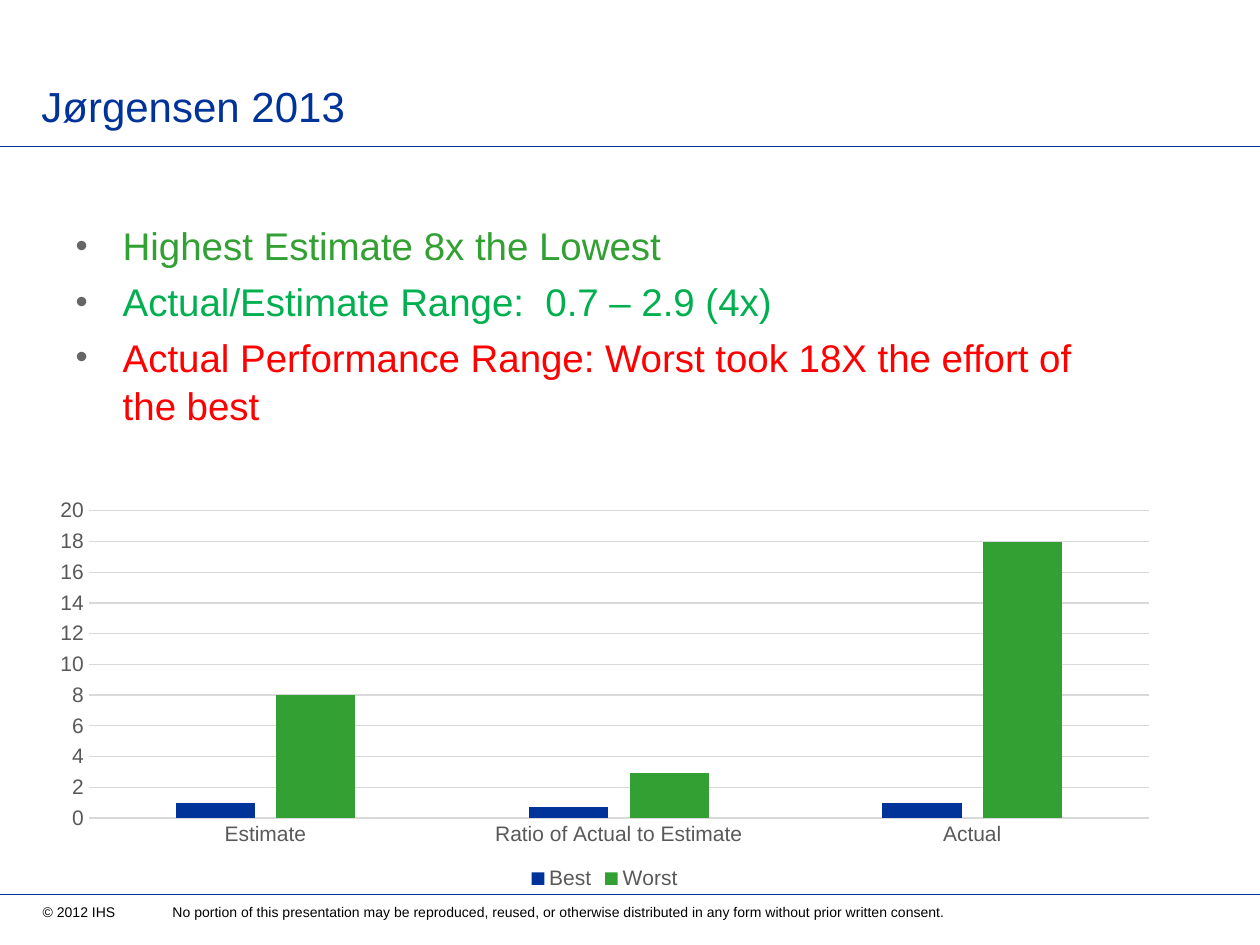
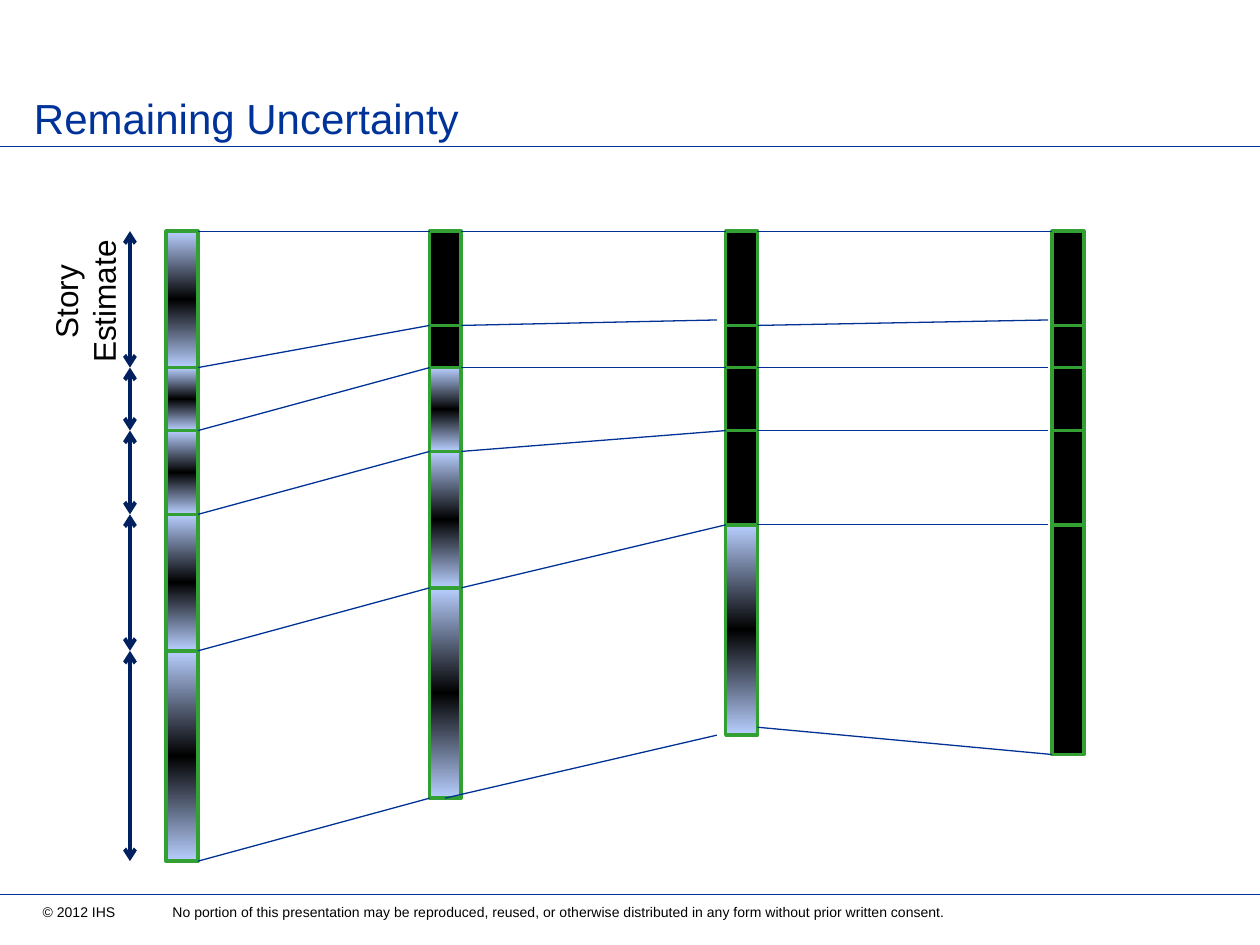
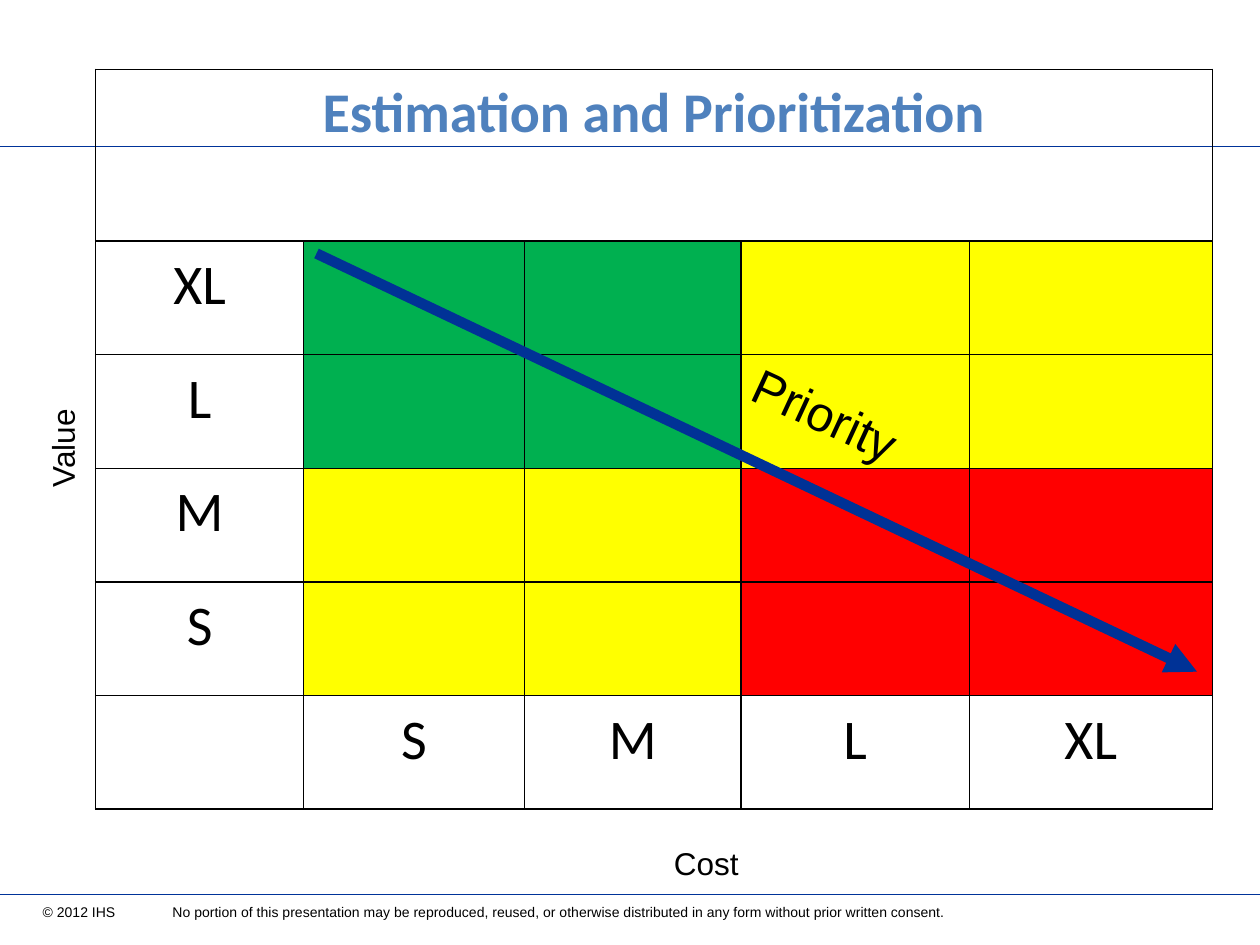
"""Build three slides about the uncertainty of software estimates."""
import copy
import itertools

import lxml.etree
import pptx
import pptx.chart.data
import pptx.dml.color
import pptx.enum.chart
import pptx.enum.shapes
import pptx.enum.text
import pptx.oxml.ns
import pptx.util

Cm = pptx.util.Cm
Pt = pptx.util.Pt
qn = pptx.oxml.ns.qn
SubElement = lxml.etree.SubElement
Align = pptx.enum.text.PP_ALIGN
AutoSize = pptx.enum.text.MSO_AUTO_SIZE

COLOURS = {
    name: pptx.dml.color.RGBColor.from_string(value)
    for name, value in {
        "blue": "003399", "link": "003296", "navy": "002060", "pale": "B8CFFF",
        "black": "000000", "green": "32A032", "emerald": "00B050",
        "yellow": "FFFF00", "red": "FF0000", "heading": "4F81BD",
        "bullet": "666666", "label": "595959", "grid": "D9D9D9",
    }.items()
}
FONT = "Arial"


def add_line(slide, start, end, colour, width, head=None, tail=None):
    points = [Cm(value) for value in (*start, *end)]
    line = slide.shapes.add_connector(pptx.enum.shapes.MSO_CONNECTOR.STRAIGHT, *points)
    line.line.color.rgb = COLOURS[colour]
    line.line.width = Pt(width)
    for tag, kind in (("a:headEnd", head), ("a:tailEnd", tail)):
        if kind:
            SubElement(line.line._get_or_add_ln(), qn(tag), type=kind)
    SubElement(line._element.spPr, qn("a:effectLst"))


def add_text(slide, text, box, size, rotation=0, align=Align.CENTER, wrap=True):
    shape = slide.shapes.add_textbox(*[Cm(value) for value in box])
    shape.rotation = rotation
    shape.text_frame.word_wrap = wrap
    shape.text_frame.auto_size = AutoSize.SHAPE_TO_FIT_TEXT
    paragraph = shape.text_frame.paragraphs[0]
    paragraph.text = text
    paragraph.alignment = align
    if "\t" in text:
        tabs = SubElement(paragraph._p.get_or_add_pPr(), qn("a:tabLst"))
        SubElement(tabs, qn("a:tab"), pos=str(Cm(2.54)), algn="l")
    paragraph.font.name = FONT
    paragraph.font.size = Pt(size)
    paragraph.font.color.rgb = COLOURS["black"]


presentation = pptx.Presentation()
presentation.slide_width = Cm(25.4)
presentation.slide_height = Cm(19.05)

slides = []
for layout, title, box in (
    (1, "Jørgensen 2013", (0.58, 0.38, 21.03, 2.39)),
    (5, "Remaining Uncertainty", (0.43, -0.18, 24.51, 3.18)),
    (6, None, None),
):
    slide = presentation.slides.add_slide(presentation.slide_layouts[layout])
    slides.append(slide)
    for y in (2.95, 18.03):
        add_line(slide, (0, y), (25.4, y), "blue", 0.5)
    add_text(slide, "© 2012 IHS \t No portion of this presentation may be reproduced, reused, "
             "or otherwise distributed in any form without prior written consent.",
             (0.61, 18.08, 18.92, 0.61), 8, align=Align.LEFT, wrap=False)
    if title:
        shape = slide.shapes.title
        shape.left, shape.top, shape.width, shape.height = [Cm(value) for value in box]
        shape.text_frame.auto_size = AutoSize.NONE
        shape.text_frame.vertical_anchor = pptx.enum.text.MSO_ANCHOR.BOTTOM
        paragraph = shape.text_frame.paragraphs[0]
        paragraph.text = title
        paragraph.alignment = Align.LEFT
        paragraph.font.name = FONT
        paragraph.font.size = Pt(24)
        paragraph.font.color.rgb = COLOURS["blue"]
study_slide, uncertainty_slide, priority_slide = slides

body = study_slide.placeholders[1]
body.left, body.top, body.width, body.height = Cm(1.27), Cm(4.32), Cm(21.39), Cm(12.57)
body.text_frame.auto_size = AutoSize.NONE
findings = (
    ("Highest Estimate 8x the Lowest", "green"),
    ("Actual/Estimate Range:  0.7 – 2.9 (4x)", "emerald"),
    ("Actual Performance Range: Worst took 18X the effort of the best", "red"),
)
for index, (text, colour) in enumerate(findings):
    paragraph = body.text_frame.add_paragraph() if index else body.text_frame.paragraphs[0]
    paragraph.text = text
    properties = paragraph._p.get_or_add_pPr()
    properties.set("marL", str(Cm(0.95)))
    properties.set("indent", str(Cm(-0.95)))
    bullet_colour = SubElement(properties, qn("a:buClr"))
    SubElement(bullet_colour, qn("a:srgbClr"), val=str(COLOURS["bullet"]))
    SubElement(properties, qn("a:buSzPct"), val="90000")
    SubElement(properties, qn("a:buChar"), char="•")
    paragraph.line_spacing = 1.04
    paragraph.space_before = Pt(4.4 if index else 0)
    paragraph.font.name = FONT
    paragraph.font.size = Pt(22)
    paragraph.font.color.rgb = COLOURS[colour]

chart_data = pptx.chart.data.CategoryChartData()
chart_data.categories = ["Estimate", "Ratio of Actual to Estimate", "Actual"]
chart_data.add_series("Best", (1, 0.7, 1))
chart_data.add_series("Worst", (8, 2.9, 18))
chart = study_slide.shapes.add_chart(
    pptx.enum.chart.XL_CHART_TYPE.COLUMN_CLUSTERED,
    Cm(0.76), Cm(9.91), Cm(22.86), Cm(8.13), chart_data,
).chart
chart.has_title = False
chart.has_legend = True
chart.legend.position = pptx.enum.chart.XL_LEGEND_POSITION.BOTTOM
chart.legend.include_in_layout = False
for axis in (chart.category_axis, chart.value_axis):
    axis.major_tick_mark = axis.minor_tick_mark = pptx.enum.chart.XL_TICK_MARK.NONE
chart.category_axis.format.line.color.rgb = COLOURS["grid"]
chart.category_axis.format.line.width = Pt(0.75)
chart.value_axis.format.line.fill.background()
chart.value_axis.minimum_scale = 0
chart.value_axis.maximum_scale = 20
chart.value_axis.major_unit = 2
gridlines = chart.value_axis.major_gridlines.format.line
gridlines.color.rgb = COLOURS["grid"]
gridlines.width = Pt(0.75)
for font in (chart.font, chart.legend.font,
             chart.category_axis.tick_labels.font, chart.value_axis.tick_labels.font):
    font.name = FONT
    font.size = Pt(12)
    font.color.rgb = COLOURS["label"]
plot = chart.plots[0]
plot.vary_by_categories = False
plot.gap_width = 219
plot.overlap = -27
for series, colour in zip(plot.series, ("blue", "green")):
    series.format.fill.solid()
    series.format.fill.fore_color.rgb = COLOURS[colour]

BAR_WIDTH = 0.64
bars = (
    (3.35, (4.66, 7.41, 8.68, 10.37, 13.12, 17.36), 0),
    (8.66, (4.66, 6.56, 7.41, 9.1, 11.85, 16.09), 2),
    (14.63, (4.66, 6.56, 7.41, 8.68, 10.58, 14.82), 4),
    (21.21, (4.66, 6.56, 7.41, 8.68, 10.58, 15.21), 5),
)
for left, edges, finished in bars:
    for story, (top, bottom) in enumerate(itertools.pairwise(edges)):
        shape = uncertainty_slide.shapes.add_shape(
            pptx.enum.shapes.MSO_SHAPE.RECTANGLE,
            Cm(left), Cm(top), Cm(BAR_WIDTH), Cm(bottom - top))
        shape.shadow.inherit = False
        shape.line.color.rgb = COLOURS["green"]
        shape.line.width = Pt(2)
        if story < finished:
            shape.fill.solid()
            shape.fill.fore_color.rgb = COLOURS["black"]
            continue
        shape.fill.gradient()
        shape.fill.gradient_angle = 90
        stop_list = shape._element.spPr.find(".//" + qn("a:gsLst"))
        stop_list.append(copy.deepcopy(stop_list[-1]))
        for stop, position, colour in zip(
                shape.fill.gradient_stops, (0, 0.5, 1), ("pale", "black", "pale")):
            stop.position = position
            stop.color.rgb = COLOURS[colour]

special_links = {
    (1, 1): ((9.3, 6.56), (14.45, 6.45)),
    (1, 5): ((8.97, 16.09), (14.45, 14.82)),
    (2, 1): ((15.27, 6.56), (21.13, 6.45)),
    (2, 2): ((15.27, 7.41), (21.13, 7.41)),
    (2, 3): ((15.27, 8.68), (21.13, 8.68)),
    (2, 4): ((15.27, 10.58), (21.13, 10.58)),
    (2, 5): ((15.27, 14.66), (21.21, 15.21)),
}
for step, (before, after) in enumerate(itertools.pairwise(bars)):
    for edge, (start_y, end_y) in enumerate(zip(before[1], after[1])):
        start, end = special_links.get(
            (step, edge), ((before[0] + BAR_WIDTH, start_y), (after[0], end_y)))
        add_line(uncertainty_slide, start, end, "link", 0.75)

add_text(uncertainty_slide, "Story Estimate", (0.05, 5.18, 3.33, 1.8), 18, rotation=270)
for top, bottom in itertools.pairwise(bars[0][1]):
    add_line(uncertainty_slide, (2.62, top), (2.62, bottom), "navy", 2.25, "arrow", "arrow")

rows = (
    ("Estimation and Prioritization", "", "", "", ""),
    ("XL", "", "", "", ""),
    ("L", "", "", "", ""),
    ("M", "", "", "", ""),
    ("S", "", "", "", ""),
    ("", "S", "M", "L", "XL"),
)
table = priority_slide.shapes.add_table(
    6, 5, Cm(1.93), Cm(1.4), Cm(22.5), Cm(14.94)).table
table.first_row = table.horz_banding = False
for column, width in zip(table.columns, (4.19, 4.45, 4.37, 4.6, 4.9)):
    column.width = Cm(width)
for row, height in zip(table.rows, (3.46, *[2.29] * 5)):
    row.height = Cm(height)
table.cell(0, 0).merge(table.cell(0, 4))
for row, texts in enumerate(rows):
    for column, text in enumerate(texts):
        cell = table.cell(row, column)
        cell.margin_left = cell.margin_right = Cm(0.18)
        cell.margin_top = cell.margin_bottom = 0
        for side in ("L", "R", "T", "B"):
            border = SubElement(cell._tc.get_or_add_tcPr(), qn("a:ln" + side), w=str(Pt(1)))
            border_fill = SubElement(border, qn("a:solidFill"))
            SubElement(border_fill, qn("a:srgbClr"), val=str(COLOURS["black"]))
        if 1 <= row <= 4 and column:
            high_value, low_cost = row <= 2, column <= 2
            cell.fill.solid()
            cell.fill.fore_color.rgb = COLOURS[("red", "yellow", "emerald")[high_value + low_cost]]
        else:
            cell.fill.background()
        if text:
            paragraph = cell.text_frame.paragraphs[0]
            paragraph.text = text
            paragraph.alignment = Align.CENTER
            paragraph.line_spacing = 1.15
            paragraph.font.name = "Calibri"
            paragraph.font.size = Pt(32)
            paragraph.font.bold = row == 0
            paragraph.font.color.rgb = COLOURS["black" if row else "heading"]

add_text(priority_slide, "Cost", (8.64, 16.89, 11.2, 1.02), 18)
add_text(priority_slide, "Value", (-4.34, 8.53, 11.2, 1.02), 18, rotation=270)
add_line(priority_slide, (6.38, 5.11), (24.13, 13.54), "link", 6, tail="triangle")
add_text(priority_slide, "Priority", (12.57, 7.62, 8.15, 1.45), 28, rotation=24.8)

presentation.save("out.pptx")
